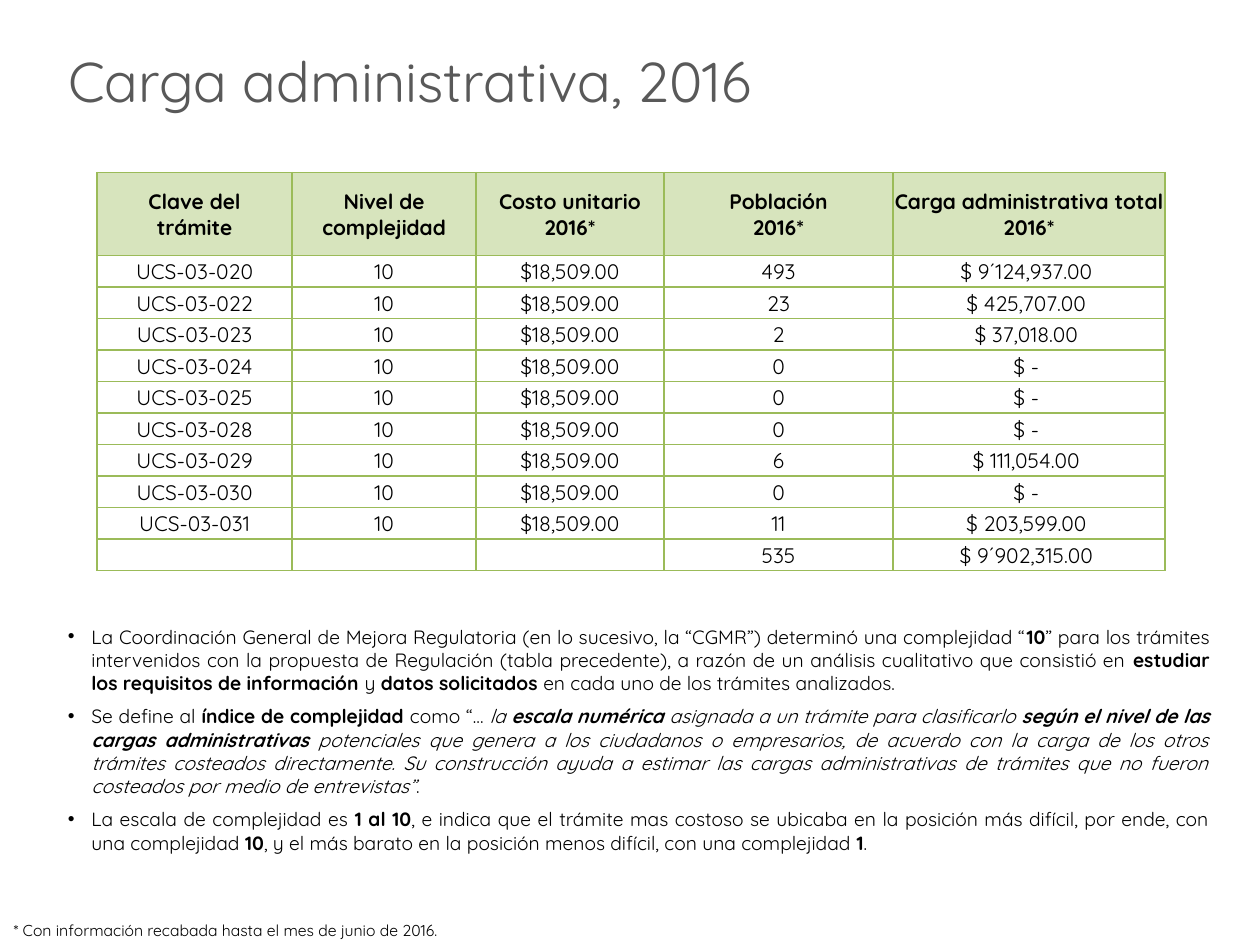
from lxml import etree
from pptx import Presentation
from pptx.dml.color import RGBColor
from pptx.enum import text as t
from pptx.oxml import ns
from pptx.util import Pt

FONT = "Quicksand"
COLORS = {"title": "595959", "text": "000000", "header": "D7E4BD", "border": "9BBB59"}
JUSTIFY, CENTER = t.PP_ALIGN.JUSTIFY, t.PP_ALIGN.CENTER

COLUMN_WIDTHS = [111.6, 105.1, 107.3, 131, 155.5]
HEADER_HEIGHT, ROW_HEIGHT = 47.5, 18
HEADERS = ["Clave del\ntrámite", "Nivel de complejidad", "Costo unitario 2016*",
           "Población\n2016*", "Carga administrativa total 2016*"]
# Key, population and total burden of each procedure
PROCEDURES = [
    ("020", "493", "$ 9´124,937.00"),
    ("022", "23", "$ 425,707.00"),
    ("023", "2", "$ 37,018.00"),
    ("024", "0", "$ -"),
    ("025", "0", "$ -"),
    ("028", "0", "$ -"),
    ("029", "6", "$ 111,054.00"),
    ("030", "0", "$ -"),
    ("031", "11", "$ 203,599.00"),
]
TOTALS = ["", "", "", "535", "$ 9´902,315.00"]

# Each note is a list of (text, style): b is bold, i is italic
NOTES = [
    [("La Coordinación General de Mejora Regulatoria (en lo sucesivo, la “CGMR”) determinó "
      "una complejidad “", ""), ("10", "b"),
     ("” para los trámites intervenidos con la propuesta de Regulación (tabla precedente), "
      "a razón de un análisis cualitativo que consistió en ", ""),
     ("estudiar los requisitos de información ", "b"), ("y ", ""),
     ("datos solicitados ", "b"), ("en cada uno de los trámites analizados.", "")],
    [("Se define al ", ""), ("índice de complejidad ", "b"), ("como “… ", ""), ("la ", "i"),
     ("escala numérica", "bi"), (" asignada a un trámite para clasificarlo ", "i"),
     ("según el nivel de las cargas administrativas", "bi"),
     (" potenciales que genera a los ciudadanos o empresarios, de acuerdo con la carga de "
      "los otros trámites costeados directamente. Su construcción ayuda a estimar las cargas "
      "administrativas de trámites que no fueron costeados por medio de entrevistas”", "i"),
     (".", "")],
    [("La escala de complejidad es ", ""), ("1 al 10", "b"),
     (", e indica que el trámite mas costoso se ubicaba en la posición más difícil, por ende, "
      "con una complejidad ", ""), ("10", "b"),
     (", y el más barato en la posición menos difícil, con una complejidad ", ""),
     ("1", "b"), (".", "")],
]


def write(paragraph, runs, size, color="text", align=JUSTIFY):
    """Fill a paragraph with (text, style) runs."""
    paragraph.alignment = align
    for words, style in runs:
        run = paragraph.add_run()
        run.text = words
        font = run.font
        font.name, font.size = FONT, Pt(size)
        font.bold, font.italic = "b" in style, "i" in style
        font.color.rgb = RGBColor.from_string(COLORS[color])
    if not runs:
        etree.SubElement(paragraph._p, ns.qn("a:endParaRPr"), sz=str(size * 100))


def add_bullet(paragraph, indent):
    properties = paragraph._p.get_or_add_pPr()
    properties.set("marL", str(Pt(indent)))
    properties.set("indent", str(-Pt(indent)))
    etree.SubElement(properties, ns.qn("a:buFont"), typeface="Arial")
    etree.SubElement(properties, ns.qn("a:buChar"), char="•")


def add_text_box(slide, left, top, width, height):
    frame = slide.shapes.add_textbox(Pt(left), Pt(top), Pt(width), Pt(height)).text_frame
    frame.word_wrap = True
    return frame


def add_borders(cell):
    properties = cell._tc.get_or_add_tcPr()
    for side in ("lnL", "lnR", "lnT", "lnB"):
        line = etree.SubElement(properties, ns.qn(f"a:{side}"), w=str(Pt(1)))
        fill = etree.SubElement(line, ns.qn("a:solidFill"))
        etree.SubElement(fill, ns.qn("a:srgbClr"), val=COLORS["border"])


def fill_cell(cell, words, header, right_inset):
    add_borders(cell)
    if header:
        cell.fill.solid()
        cell.fill.fore_color.rgb = RGBColor.from_string(COLORS["header"])
    else:
        cell.fill.background()
    cell.vertical_anchor = t.MSO_ANCHOR.MIDDLE
    cell.margin_left = cell.margin_top = Pt(0.7)
    cell.margin_right, cell.margin_bottom = Pt(right_inset), Pt(0)
    frame = cell.text_frame
    for number, line in enumerate(words.split("\n")):
        paragraph = frame.add_paragraph() if number else frame.paragraphs[0]
        runs = [(line, "b" if header else "")] if line else []
        write(paragraph, runs, 12, align=CENTER)


def add_burden_table(slide, left, top):
    body = [[f"UCS-03-{key}", "10", "$18,509.00", population, burden]
            for key, population, burden in PROCEDURES]
    rows = [HEADERS, *body, TOTALS]
    height = HEADER_HEIGHT + ROW_HEIGHT * (len(rows) - 1)
    table = slide.shapes.add_table(len(rows), len(HEADERS), Pt(left), Pt(top),
                                   Pt(sum(COLUMN_WIDTHS)), Pt(height)).table
    table.first_row = table.horz_banding = False
    for column, width in zip(table.columns, COLUMN_WIDTHS):
        column.width = Pt(width)
    for r, values in enumerate(rows):
        table.rows[r].height = Pt(ROW_HEIGHT if r else HEADER_HEIGHT)
        for c, words in enumerate(values):
            # Amounts sit slightly left of the column centre
            amount = r > 0 and c == len(values) - 1
            fill_cell(table.cell(r, c), words, r == 0, 4 if amount else 0.7)


def set_title(slide, words):
    title = slide.shapes.title
    title.left, title.top, title.width, title.height = Pt(31.7), Pt(23), Pt(570), Pt(46)
    frame = title.text_frame
    frame.auto_size = t.MSO_AUTO_SIZE.NONE
    frame.vertical_anchor = t.MSO_ANCHOR.TOP
    write(frame.paragraphs[0], [(words, "")], 32, color="title")


def add_notes(slide):
    frame = add_text_box(slide, 31.7, 353.5, 666.7, 139.7)
    for number, runs in enumerate(NOTES):
        paragraph = frame.add_paragraph() if number else frame.paragraphs[0]
        if number:
            paragraph.space_before = Pt(6)
        add_bullet(paragraph, 13.5)
        write(paragraph, runs, 11)


def main():
    presentation = Presentation()
    presentation.slide_width, presentation.slide_height = Pt(720), Pt(540)
    slide = presentation.slides.add_slide(presentation.slide_layouts[5])

    set_title(slide, "Carga administrativa, 2016")
    add_burden_table(slide, 55.4, 98.6)
    add_notes(slide)

    # Footnote
    footnote = add_text_box(slide, 0.7, 522.7, 436.3, 18)
    write(footnote.paragraphs[0],
          [("* Con información recabada hasta el mes de junio de 2016.", "")], 9)

    presentation.save("out.pptx")


if __name__ == "__main__":
    main()
